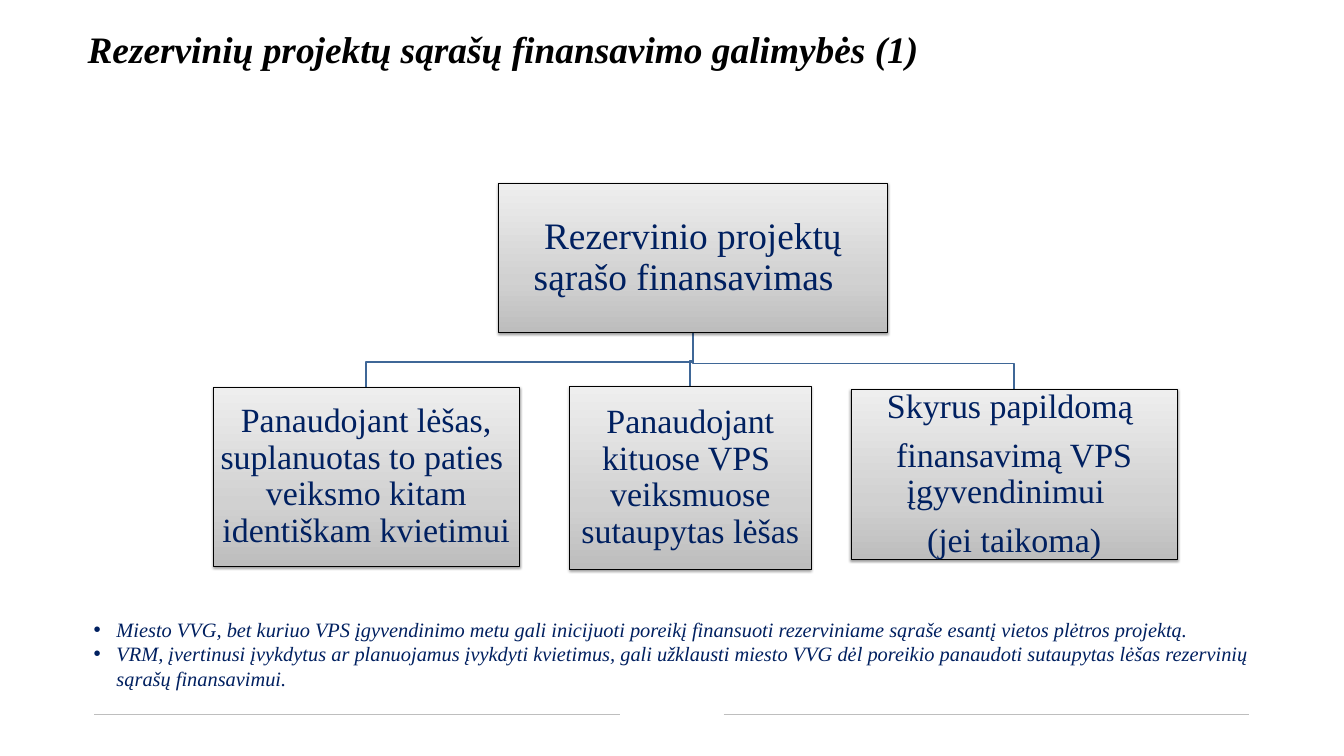
from copy import deepcopy

from lxml import etree
from pptx import Presentation
from pptx.dml.color import RGBColor
from pptx.enum import shapes, text
from pptx.oxml import ns
from pptx.util import Cm, Pt

FONT = "Times New Roman"
BLACK = RGBColor(0, 0, 0)
NAVY = RGBColor(0x00, 0x20, 0x60)
BLUE = RGBColor(0x3F, 0x67, 0x97)
RULE_GREY = RGBColor(0xBE, 0xBE, 0xBE)
BOX_GREYS = (
    RGBColor(0xBD, 0xBD, 0xBD),
    RGBColor(0xD1, 0xD1, 0xD1),
    RGBColor(0xEE, 0xEE, 0xEE),
)
ELBOW_RISE = 1.06
INSET = 0.08

# left, top, width, height in centimetres
ROOT = (20.72, 7.62, 16.16, 6.2)
ROOT_TEXT = ["Rezervinio projektų sąrašo finansavimas  "]
BRANCHES = [
    ((8.86, 16.1, 12.71, 7.44),
     ["Panaudojant lėšas, suplanuotas to paties  veiksmo kitam identiškam kvietimui"]),
    ((23.67, 16.05, 10.03, 7.62),
     ["Panaudojant kituose VPS  veiksmuose sutaupytas lėšas"]),
    ((35.36, 16.18, 13.56, 7.09),
     ["Skyrus papildomą ", "finansavimą VPS įgyvendinimui  ", "(jei taikoma)"]),
]
NOTES = [
    "Miesto VVG, bet kuriuo VPS įgyvendinimo metu gali inicijuoti poreikį finansuoti "
    "rezerviniame sąraše esantį vietos plėtros projektą.",
    "VRM, įvertinusi įvykdytus ar planuojamus įvykdyti kvietimus, gali užklausti miesto VVG "
    "dėl poreikio panaudoti sutaupytas lėšas rezervinių sąrašų finansavimui.",
]


def write(tf, lines, size, color, bold=False, italic=False):
    tf.word_wrap = True
    tf.text = "\n".join(lines)
    for p in tf.paragraphs:
        for r in p.runs:
            f = r.font
            f.name, f.size, f.bold, f.italic = FONT, Pt(size), bold, italic
            f.color.rgb = color


def set_margins(tf, cm):
    tf.margin_left = tf.margin_top = tf.margin_right = tf.margin_bottom = Cm(cm)


def add_title(s, title):
    tf = s.shapes.add_textbox(Cm(3.64), Cm(1.07), Cm(48.56), Cm(5.64)).text_frame
    set_margins(tf, 0)
    write(tf, [title], 44, BLACK, bold=True, italic=True)


def fill_gradient(sp):
    """Fill with three greys, the darkest at the bottom."""
    sp.fill.gradient()
    sp.fill.gradient_angle = 90
    first = sp._element.spPr.find(".//" + ns.qn("a:gs"))
    first.addnext(deepcopy(first))
    for stop, position, color in zip(sp.fill.gradient_stops, (0, 0.35, 1), BOX_GREYS):
        stop.position = position
        stop.color.rgb = color


def add_shadow(sp):
    sp.shadow.inherit = False
    effects = sp._element.spPr.find(ns.qn("a:effectLst"))
    shadow = etree.SubElement(effects, ns.qn("a:outerShdw"), blurRad="40000",
                              dist="20000", dir="5400000", rotWithShape="0")
    color = etree.SubElement(shadow, ns.qn("a:srgbClr"), val="000000")
    etree.SubElement(color, ns.qn("a:alpha"), val="38000")


def add_box(s, box, lines, size):
    sp = s.shapes.add_shape(shapes.MSO_SHAPE.RECTANGLE, *map(Cm, box))
    fill_gradient(sp)
    sp.line.color.rgb = BLACK
    sp.line.width = Pt(0.75)
    add_shadow(sp)
    tf = sp.text_frame
    set_margins(tf, INSET)
    tf.vertical_anchor = text.MSO_ANCHOR.MIDDLE
    write(tf, lines, size, NAVY)
    for p in tf.paragraphs:
        p.alignment = text.PP_ALIGN.CENTER
        p.line_spacing = 0.9
        p.space_after = Pt(14)


def add_branch_line(s, parent, child):
    """Draw an elbow from the parent's bottom centre to the child's top centre."""
    x1, y1 = parent[0] + parent[2] / 2, parent[1] + parent[3]
    x2, y2 = child[0] + child[2] / 2, child[1]
    bend = y2 - ELBOW_RISE
    fb = s.shapes.build_freeform(Cm(x1), Cm(y1))
    fb.add_line_segments([(Cm(x), Cm(y)) for x, y in ((x1, bend), (x2, bend), (x2, y2))],
                         close=False)
    sp = fb.convert_to_shape()
    sp.fill.background()
    sp.line.color.rgb = BLUE
    sp.line.width = Pt(2)
    sp.shadow.inherit = False


def add_rule(s, x, y, width):
    c = s.shapes.add_connector(shapes.MSO_CONNECTOR.STRAIGHT,
                               Cm(x), Cm(y), Cm(x + width), Cm(y))
    c.line.color.rgb = RULE_GREY
    c.line.width = Pt(0.4)
    etree.SubElement(c._element.spPr, ns.qn("a:effectLst"))


def add_notes_list(s, lines):
    tf = s.shapes.add_textbox(Cm(3.64), Cm(25.52), Cm(50.27), Cm(3.33)).text_frame
    write(tf, lines, 24, NAVY, italic=True)
    for p in tf.paragraphs:
        pPr = p._p.get_or_add_pPr()
        pPr.set("marL", str(Cm(0.95)))
        pPr.set("indent", str(-Cm(0.95)))
        etree.SubElement(pPr, ns.qn("a:buFont"), typeface="Arial")
        etree.SubElement(pPr, ns.qn("a:buChar"), char="•")


def main():
    prs = Presentation()
    prs.slide_width, prs.slide_height = Pt(1583), Pt(891)
    s = prs.slides.add_slide(prs.slide_layouts[6])
    for x, y in ((3.91, 29.71), (30.07, 29.68)):
        add_rule(s, x, y, 21.84)
    add_title(s, "Rezervinių projektų sąrašų finansavimo galimybės (1)")
    for box, _ in BRANCHES:
        add_branch_line(s, ROOT, box)
    add_box(s, ROOT, ROOT_TEXT, 44)
    for box, lines in BRANCHES:
        add_box(s, box, lines, 40)
    add_notes_list(s, NOTES)
    prs.save("out.pptx")


if __name__ == "__main__":
    main()
